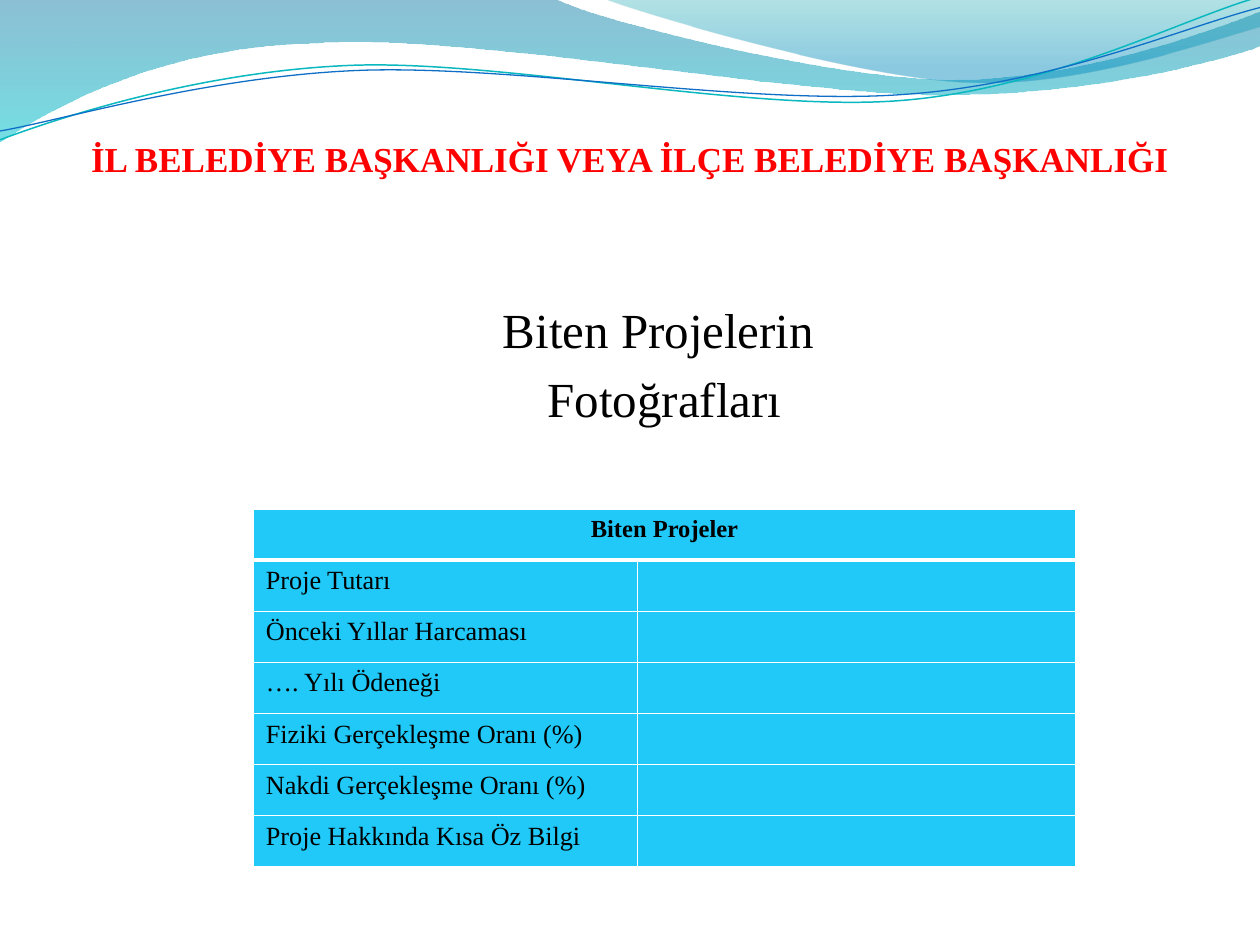
from lxml import etree
from pptx import Presentation, util as u
from pptx.dml.color import RGBColor
from pptx.enum import text
from pptx.oxml.ns import qn

# Content
TITLE = "İL BELEDİYE BAŞKANLIĞI VEYA İLÇE BELEDİYE BAŞKANLIĞI"
PHOTO_CAPTION = ["Biten Projelerin ", "Fotoğrafları"]
TABLE_HEADER = "Biten Projeler"
PROJECT_FIELDS = [
    "Proje Tutarı", "Önceki Yıllar Harcaması", "…. Yılı Ödeneği",
    "Fiziki Gerçekleşme Oranı (%)", "Nakdi Gerçekleşme Oranı (%)",
    "Proje Hakkında Kısa Öz Bilgi",
]

# Style
FONT = "Times New Roman"
BLACK, WHITE = RGBColor(0, 0, 0), RGBColor(255, 255, 255)
RED, SKY = RGBColor(255, 0, 0), RGBColor(0x20, 0xC9, 0xF8)
DEEP_BLUE, TURQUOISE = RGBColor(0, 0x74, 0xA1), RGBColor(0, 0xC6, 0xCF)
TEAL, AZURE = RGBColor(0, 0xA1, 0xA9), RGBColor(0, 0x8B, 0xBF)
TEAL_LINE, BLUE_LINE = RGBColor(0x0A, 0xB8, 0xBF), RGBColor(0x0F, 0x6F, 0xC6)

# Waves in inches: a pair is a straight step, a six-tuple a Bézier curve.
# Bands carry gradient stops of (position, colour, opacity in percent).
BANDS = [
    ([(0, 0), (4.4, -.01), (4.76, .17, 6.64, .63, 7.58, .63),
      (8.53, .63, 9.58, .26, 10, .09), (10.01, .36),
      (9.83, .44, 8.7, .76, 7.46, .75), (6.22, .75, 3.82, .28, 2.57, .34),
      (1.29, .36, .46, .83, -.01, 1.13)],
     [(0, DEEP_BLUE, 45), (1, TURQUOISE, 55)]),
    ([(4.79, -.01), (5.09, .11, 6.82, .62, 7.69, .65),
      (8.56, .69, 9.61, .32, 10, .21), (10, 0)],
     [(0, TEAL, 30), (.8, AZURE, 45)]),
]
STRANDS = [
    ([(0, 1.11), (.48, .93, 1.58, .57, 2.77, .52),
      (3.95, .47, 5.93, .89, 7.13, .8), (8.33, .71, 9.38, .15, 9.98, -.02)],
     TEAL_LINE, .85),
    ([(0, 1.04), (.47, .96, 1.64, .61, 2.83, .56),
      (4.03, .51, 5.97, .84, 7.17, .75), (8.36, .67, 9.41, .21, 10, .06)],
     BLUE_LINE, .75),
]

# Grid in inches: caption and table share one column
LEFT, WIDTH, LABEL_WIDTH = 2.01, 6.53, 3.05
CAPTION_TOP, TABLE_TOP, TABLE_HEIGHT = 2.18, 4.04, 2.84


def add_wave(slide, steps, close):
    """Outline the knots, then bend the segments that have control points."""
    knots = [(u.Inches(step[-2]), u.Inches(step[-1])) for step in steps]
    builder = slide.shapes.build_freeform(*knots[0])
    builder.add_line_segments(knots[1:], close=close)
    wave = builder.convert_to_shape()
    wave.shadow.inherit = False
    segments = list(wave._element.spPr.iter(qn("a:lnTo")))
    for segment, step in zip(segments, steps[1:]):
        if len(step) == 6:
            segment.tag = qn("a:cubicBezTo")
            for i in (0, 1):
                x, y = step[2 * i:2 * i + 2]
                segment.insert(i, etree.Element(
                    qn("a:pt"), x=str(u.Inches(x) - wave.left),
                    y=str(u.Inches(y) - wave.top)))
    return wave


def style(paragraph, size, color=BLACK, bold=False, align=None):
    font = paragraph.font
    font.name, font.size, font.bold = FONT, u.Pt(size), bold
    font.color.rgb = color
    paragraph.alignment = align


def add_borders(cell, bottom):
    props = cell._tc.get_or_add_tcPr()
    for i, (side, width) in enumerate(
            [("lnL", 1), ("lnR", 1), ("lnT", 1), ("lnB", bottom)]):
        line = etree.Element(qn("a:" + side), w=str(u.Pt(width)))
        fill = etree.SubElement(line, qn("a:solidFill"))
        etree.SubElement(fill, qn("a:srgbClr"), val=str(WHITE))
        props.insert(i, line)


def main():
    prs = Presentation()
    prs.slide_width, prs.slide_height = u.Inches(10), u.Inches(7.5)
    slide = prs.slides.add_slide(prs.slide_layouts[5])
    center, middle = text.PP_ALIGN.CENTER, text.MSO_ANCHOR.MIDDLE

    # Wave decoration
    for steps, stops in BANDS:
        band = add_wave(slide, steps, close=True)
        band.line.fill.background()
        band.fill.gradient()
        band.fill.gradient_angle = 270
        for stop, (position, color, _) in zip(band.fill.gradient_stops, stops):
            stop.position, stop.color.rgb = position, color
        colors = band._element.spPr.iter(qn("a:srgbClr"))
        for node, (_, _, opacity) in zip(list(colors), stops):
            etree.SubElement(node, qn("a:alpha"), val=str(opacity * 1000))
    for steps, color, width in STRANDS:
        strand = add_wave(slide, steps, close=False)
        strand.fill.background()
        strand.line.color.rgb, strand.line.width = color, u.Pt(width)

    # Title
    title = slide.shapes.title
    title.left, title.top = 0, u.Inches(.92)
    title.width, title.height = prs.slide_width, u.Inches(.63)
    frame = title.text_frame
    frame.text, frame.vertical_anchor = TITLE, middle
    frame.margin_left = frame.margin_right = frame.margin_bottom = 0
    style(frame.paragraphs[0], 20, RED, True, center)

    # Project table
    table = slide.shapes.add_table(
        len(PROJECT_FIELDS) + 1, 2, u.Inches(LEFT), u.Inches(TABLE_TOP),
        u.Inches(WIDTH), u.Inches(TABLE_HEIGHT)).table
    table.columns[0].width = u.Inches(LABEL_WIDTH)
    table.columns[1].width = u.Inches(WIDTH - LABEL_WIDTH)
    table.cell(0, 0).merge(table.cell(0, 1))
    for r, label in enumerate([TABLE_HEADER] + PROJECT_FIELDS):
        header = r == 0
        table.cell(r, 0).text = label
        style(table.cell(r, 0).text_frame.paragraphs[0], 14 if header else 15,
              bold=header, align=center if header else None)
        for cell in table.rows[r].cells:
            cell.fill.solid()
            cell.fill.fore_color.rgb = SKY
            add_borders(cell, bottom=3 if header else 1)

    # Photo caption
    caption = slide.shapes.add_textbox(
        u.Inches(LEFT), u.Inches(CAPTION_TOP),
        u.Inches(WIDTH), u.Inches(TABLE_TOP - CAPTION_TOP)).text_frame
    caption.word_wrap, caption.vertical_anchor = True, middle
    caption.margin_bottom = u.Inches(.5)
    caption.text = "\n".join(PHOTO_CAPTION)
    for paragraph in caption.paragraphs:
        style(paragraph, 28, align=center)
        paragraph.space_before = u.Pt(5.6)

    prs.save("out.pptx")


if __name__ == "__main__":
    main()
